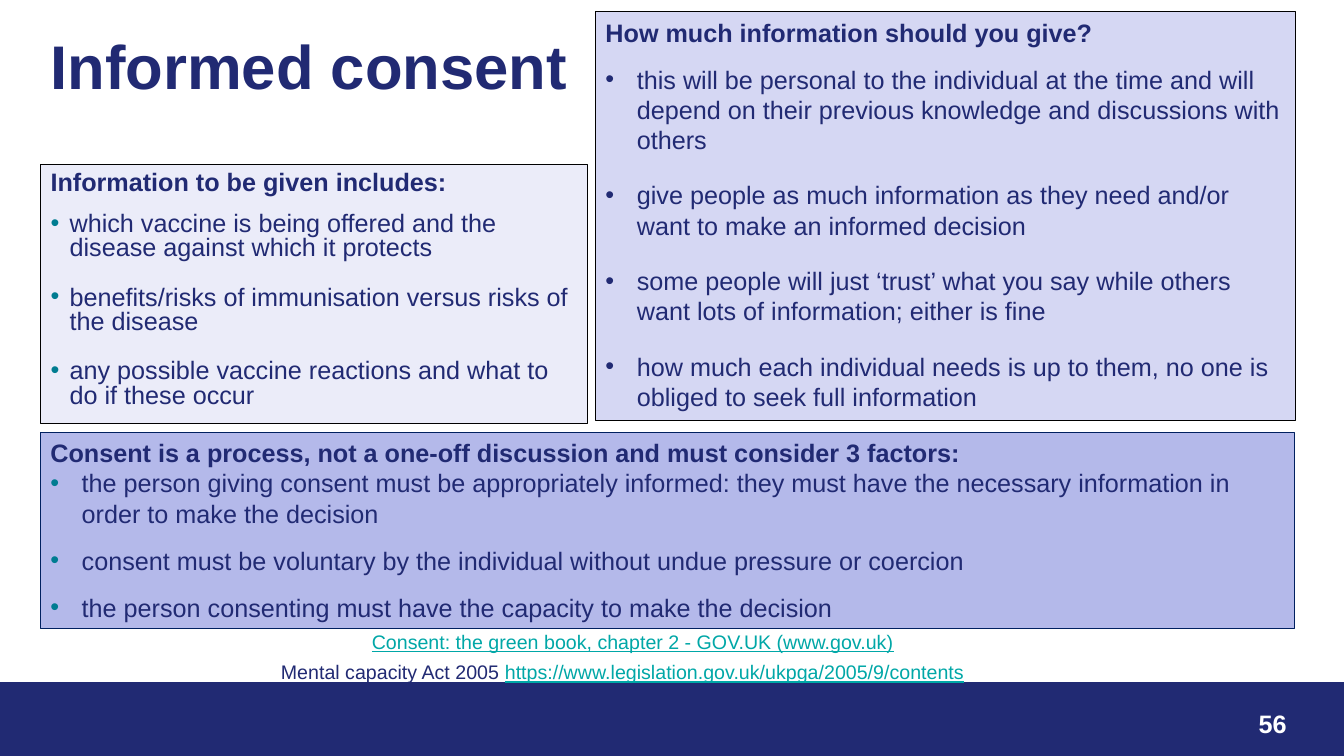
import dataclasses

import lxml.etree
import pptx
import pptx.dml.color
import pptx.enum.shapes
import pptx.enum.text
import pptx.oxml.ns
import pptx.util

Cm, Pt = pptx.util.Cm, pptx.util.Pt
qn = pptx.oxml.ns.qn


@dataclasses.dataclass(frozen=True)
class Theme:
    font: str = "Arial"
    navy: str = "212A73"
    teal: str = "007C91"
    link: str = "00A7A7"
    white: str = "FFFFFF"
    black: str = "000000"
    edge: str = "002060"
    pale: str = "EBECF9"
    mid: str = "D5D7F3"
    deep: str = "B4B9EA"
    title: int = 44
    body: int = 18
    note: int = 14


def rgb(code):
    return pptx.dml.color.RGBColor.from_string(code)


class Deck:
    def __init__(self, theme):
        self.theme = theme
        self.file = pptx.Presentation()
        self.file.slide_width, self.file.slide_height = Cm(33.87), Cm(19.05)
        self.slide = self.file.slides.add_slide(self.file.slide_layouts[1])

    def place(self, shape, box):
        shape.left, shape.top, shape.width, shape.height = map(Cm, box)

    def paint(self, shape, fill, line, width=0.75):
        shape.fill.solid()
        shape.fill.fore_color.rgb = rgb(fill)
        shape.line.color.rgb = rgb(line)
        shape.line.width = Pt(width)

    def rect(self, box, fill, line, width=0.75):
        kind = pptx.enum.shapes.MSO_SHAPE.RECTANGLE
        shape = self.slide.shapes.add_shape(kind, *map(Cm, box))
        shape.shadow.inherit = False
        self.paint(shape, fill, line, width)
        return shape

    def frame(self, shape, anchor="TOP"):
        frame = shape.text_frame
        frame.word_wrap = True
        frame.auto_size = pptx.enum.text.MSO_AUTO_SIZE.NONE
        frame.vertical_anchor = pptx.enum.text.MSO_ANCHOR[anchor]
        return frame

    def run(self, para, text, size, color=None, bold=False, under=False):
        run = para.add_run()
        run.text = text
        font = run.font
        font.name, font.size = self.theme.font, Pt(size)
        font.bold, font.underline = bold, under
        font.color.rgb = rgb(color or self.theme.navy)

    def space(self, para, lead=1.0, before=0, after=0):
        para.alignment = pptx.enum.text.PP_ALIGN.LEFT
        para.line_spacing = lead
        para.space_before, para.space_after = Pt(before), Pt(after)

    def bullet(self, para, indent, color):
        props = para._p.get_or_add_pPr()
        props.set("marL", str(Cm(indent)))
        props.set("indent", str(-Cm(indent)))
        if not indent:
            lxml.etree.SubElement(props, qn("a:buNone"))
            return
        tint = lxml.etree.SubElement(props, qn("a:buClr"))
        lxml.etree.SubElement(tint, qn("a:srgbClr"), val=color)
        lxml.etree.SubElement(props, qn("a:buFont"), typeface=self.theme.font)
        lxml.etree.SubElement(props, qn("a:buChar"), char="•")

    def title(self, box, text):
        shape = self.slide.shapes.title
        self.place(shape, box)
        para = self.frame(shape, "MIDDLE").paragraphs[0]
        self.space(para, 0.9)
        self.run(para, text, self.theme.title, bold=True)

    def body(self, box, fill, line):
        shape = self.slide.placeholders[1]
        self.place(shape, box)
        self.paint(shape, fill, line)
        return shape

    def panel(self, shape, head, items, indent, dot,
              leads=(1.0, 1.0), first=12, after=6):
        frame = self.frame(shape)
        para = frame.paragraphs[0]
        self.bullet(para, 0, dot)
        self.space(para, leads[0])
        self.run(para, head, self.theme.body, bold=True)
        for index, item in enumerate(items):
            para = frame.add_paragraph()
            self.bullet(para, indent, dot)
            self.space(para, leads[1], 12 if index else first, after)
            self.run(para, item, self.theme.body)

    def label(self, box, size, *runs):
        shape = self.slide.shapes.add_textbox(*map(Cm, box))
        para = self.frame(shape).paragraphs[0]
        self.space(para)
        for text, style in runs:
            self.run(para, text, size, **style)


def main():
    theme = Theme()
    deck = Deck(theme)
    link = {"color": theme.link, "under": True}

    # Footer band and page number
    deck.rect((0, 17.2, 33.87, 1.85), theme.navy, theme.navy, 1)
    deck.label((31.47, 17.73, 2.3, 1.02), theme.body,
               ("56", {"color": theme.white, "bold": True}))

    # Title
    deck.title((1.02, 0.74, 29.21, 2.03), "Informed consent")

    # Left panel: what to tell
    left = deck.body((1.02, 4.14, 13.79, 6.53), theme.pale, theme.black)
    deck.panel(left, "Information to be given includes:", [
        "which vaccine is being offered and the disease against which it protects",
        "benefits/risks of immunisation versus risks of the disease",
        "any possible vaccine reactions and what to do if these occur",
    ], 0.48, theme.teal, leads=(0.9, 0.8))

    # Right panel: how much to tell
    right = deck.rect((15.01, 0.3, 17.63, 10.31), theme.mid, theme.black)
    deck.panel(right, "How much information should you give?", [
        "this will be personal to the individual at the time and will depend on "
        "their previous knowledge and discussions with others",
        "give people as much information as they need and/or want to make an "
        "informed decision",
        "some people will just ‘trust’ what you say while others want lots of "
        "information; either is fine",
        "how much each individual needs is up to them, no one is obliged to seek "
        "full information",
    ], 0.79, theme.navy)

    # Lower panel: three factors
    lower = deck.rect((1.02, 10.9, 31.6, 4.95), theme.deep, theme.edge)
    deck.panel(lower, "Consent is a process, not a one-off discussion and must "
               "consider 3 factors:", [
        "the person giving consent must be appropriately informed: they must have "
        "the necessary information in order to make the decision",
        "consent must be voluntary by the individual without undue pressure or "
        "coercion",
        "the person consenting must have the capacity to make the decision",
    ], 0.79, theme.teal, first=0, after=0)

    # Sources
    deck.label((9.12, 15.75, 17.4, 0.86), theme.note,
               ("Consent: the green book, chapter 2 - GOV.UK (www.gov.uk)", link))
    deck.label((6.83, 16.51, 20, 0.86), theme.note,
               ("Mental capacity Act 2005 ", {}),
               ("https://www.legislation.gov.uk/ukpga/2005/9/contents", link))

    deck.file.save("out.pptx")


if __name__ == "__main__":
    main()
